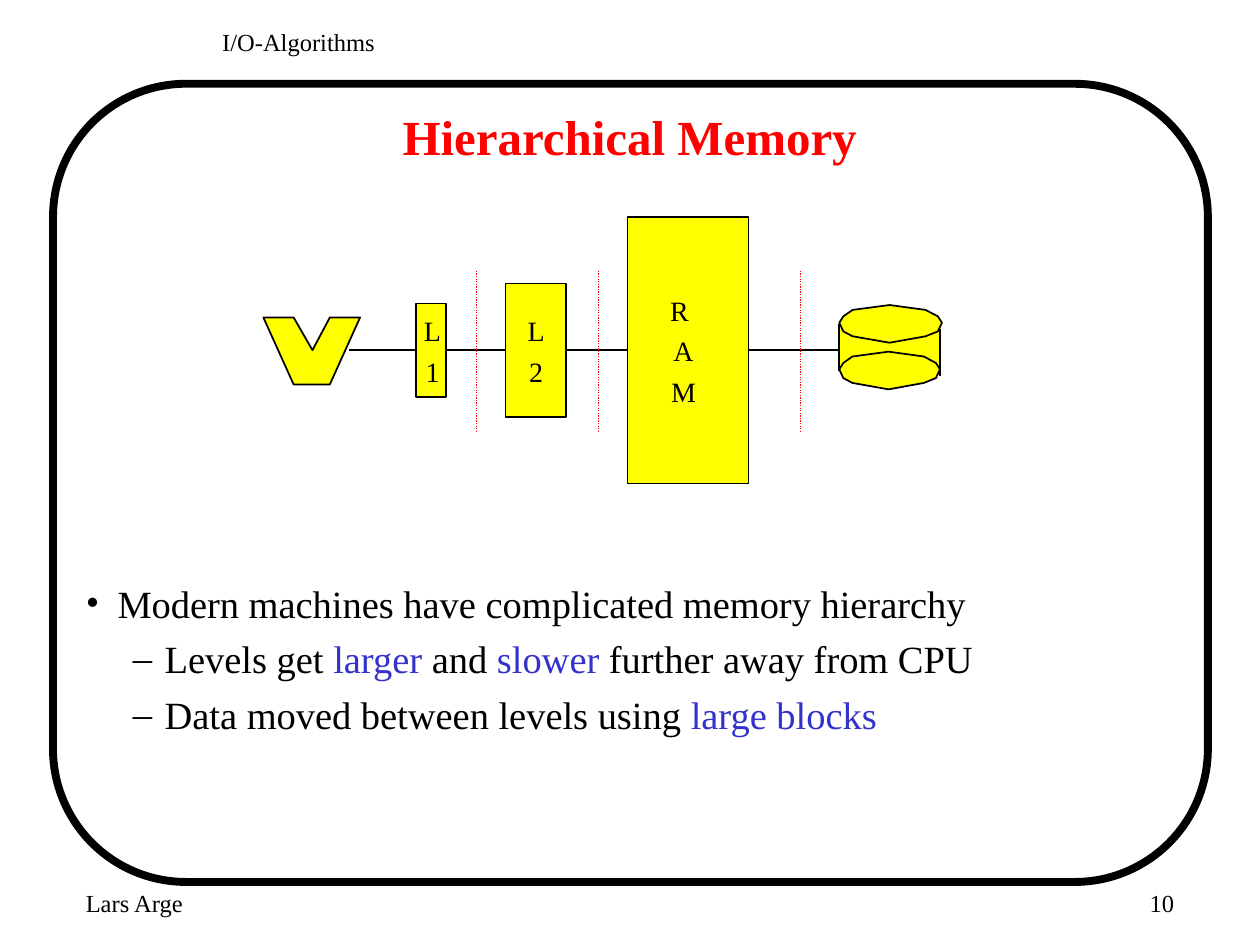
import pptx
import pptx.util
import pptx.dml.color
import pptx.enum.dml
import pptx.enum.shapes
import pptx.enum.text
import pptx.oxml

Cm = pptx.util.Cm
Pt = pptx.util.Pt
RGB = pptx.dml.color.RGBColor
ALIGN = pptx.enum.text.PP_ALIGN
SHAPE = pptx.enum.shapes.MSO_SHAPE
BLACK = RGB(0, 0, 0)
RED = RGB(255, 0, 0)
BLUE = RGB(0x33, 0x33, 0xCC)
YELLOW = RGB(255, 255, 0)
FONT = "Times New Roman"
AXIS = 7.06


def add_tag(node, name, **attrs):
    child = pptx.oxml.parse_xml(
        f'<a:{name} xmlns:a="http://schemas.openxmlformats.org/drawingml/2006/main"/>')
    for key, value in attrs.items():
        child.set(key, value)
    node.append(child)


def paint(shape, fill=YELLOW, width=1):
    """Set fill and black outline; None leaves either one out."""
    shape.shadow.inherit = False
    if fill is None:
        shape.fill.background()
    else:
        shape.fill.solid()
        shape.fill.fore_color.rgb = fill
    if width is None:
        shape.line.fill.background()
    else:
        shape.line.color.rgb = BLACK
        shape.line.width = Pt(width)


def add_block(slide, x, y, w, h, kind=SHAPE.RECTANGLE, **style):
    paint(slide.shapes.add_shape(kind, Cm(x), Cm(y), Cm(w), Cm(h)), **style)


def add_line(slide, x1, y1, x2, y2, color=BLACK, width=1, dash=None):
    line = slide.shapes.add_connector(
        pptx.enum.shapes.MSO_CONNECTOR.STRAIGHT, Cm(x1), Cm(y1), Cm(x2), Cm(y2))
    line.line.color.rgb = color
    line.line.width = Pt(width)
    if dash:
        line.line.dash_style = dash
    add_tag(line._element.spPr, "effectLst")


def add_poly(slide, points):
    first, *rest = [(Cm(x), Cm(y)) for x, y in points]
    form = slide.shapes.build_freeform(*first)
    form.add_line_segments(rest, close=True)
    paint(form.convert_to_shape())


def add_plate(slide, x, y, w, h):
    """Draw one twelve-sided face of the disk."""
    upper = [(0, .47), (.04, .3), (.13, .13), (.49, 0), (.84, .13), (.96, .3), (1, .47)]
    lower = [(.96, .7), (.84, .83), (.49, 1), (.13, .83), (.04, .7)]
    add_poly(slide, [(x + w * u, y + h * v) for u, v in upper + lower])


def add_box(slide, x, y, w, h, wrap=True):
    frame = slide.shapes.add_textbox(Cm(x), Cm(y), Cm(w), Cm(h)).text_frame
    frame.word_wrap = wrap
    return frame


def add_run(para, text, size, color=BLACK, bold=False):
    run = para.add_run()
    run.text = text
    run.font.name = FONT
    run.font.size = Pt(size)
    run.font.color.rgb = color
    run.font.bold = bold


def next_para(frame, index, gap):
    """Return the paragraph at index, with a gap above all but the first."""
    if index == 0:
        return frame.paragraphs[0]
    para = frame.add_paragraph()
    para.space_before = Pt(gap)
    return para


def indent(para, left):
    props = para._p.get_or_add_pPr()
    props.set("marL", str(Cm(left)))
    props.set("indent", str(-Cm(0.64)))
    return props


def add_text(slide, x, y, w, h, text, size=14, color=BLACK, bold=False, align=ALIGN.LEFT):
    frame = add_box(slide, x, y, w, h)
    para = frame.paragraphs[0]
    para.alignment = align
    add_run(para, text, size, color, bold)
    return frame


def add_label(slide, x, y, h, marks):
    frame = add_box(slide, x, y, 1.04, h, wrap=False)
    for index, mark in enumerate(marks):
        para = next_para(frame, index, 3.9)
        para.alignment = ALIGN.CENTER
        indent(para, 0.64)
        add_run(para, mark, 16)


def add_list(slide, x, y, w, h, items):
    frame = add_box(slide, x, y, w, h)
    for index, (level, runs) in enumerate(items):
        para = next_para(frame, index, 5.5)
        para.level = level
        props = indent(para, (0.64, 1.59)[level])
        add_tag(props, "buFont", typeface=FONT)
        add_tag(props, "buChar", char="•–"[level])
        for text, color in runs:
            add_run(para, text, 22, color)


def draw_chain(slide):
    """Draw processor, caches, main memory and disk along one axis."""
    add_block(slide, 16.92, 6.63, 2.03, 0.86, width=None)
    for x, w, h in [(8.38, 0.61, 1.88), (10.19, 1.22, 2.69), (12.65, 2.44, 5.38)]:
        add_block(slide, x, AXIS - h / 2, w, h)
    add_plate(slide, 16.92, 6.15, 2.07, 0.76)
    for x, y in [(16.92, 6.53), (18.95, 6.63)]:
        add_line(slide, x, y, x, y + 0.94)
    add_poly(slide, [(5.31, 6.4), (5.92, 6.4), (6.3, AXIS), (6.65, 6.4),
                     (7.26, 6.4), (6.65, 7.75), (5.92, 7.75)])
    for left, right in [(7.04, 8.38), (8.99, 10.19), (11.41, 12.65), (15.09, 16.92)]:
        add_line(slide, left, AXIS, right, AXIS)
    add_plate(slide, 16.92, 7.09, 2.03, 0.76)
    add_label(slide, 8.2, 6.2, 1.75, "L1")
    add_label(slide, 10.29, 6.2, 1.75, "L2")
    add_label(slide, 13.26, 5.79, 2.57, ["R\t", "A", "M"])
    for x in (9.6, 12.07, 16.13):
        add_line(slide, x, 5.46, x, 8.72, RED, 0.75,
                 pptx.enum.dml.MSO_LINE.ROUND_DOT)


def main():
    deck = pptx.Presentation()
    deck.slide_width, deck.slide_height = Cm(25.4), Cm(19.05)
    slide = deck.slides.add_slide(deck.slide_layouts[6])
    add_block(slide, 1.07, 1.69, 23.28, 16.09,
              SHAPE.FLOWCHART_ALTERNATE_PROCESS, fill=None, width=4.5)
    add_text(slide, 1.48, 17.78, 5.29, 1.27, "Lars Arge")
    add_text(slide, 4.23, 0.42, 16.72, 1.06, "I/O-Algorithms")
    add_text(slide, 18.63, 17.78, 5.29, 1.27, "10", align=ALIGN.RIGHT)
    title = add_text(slide, 1.9, 1.9, 21.59, 1.69, "Hierarchical Memory",
                     28, RED, True, ALIGN.CENTER)
    title.vertical_anchor = pptx.enum.text.MSO_ANCHOR.MIDDLE
    add_list(slide, 1.48, 11.56, 22.44, 5.87, [
        (0, [("Modern machines have complicated memory hierarchy", BLACK)]),
        (1, [("Levels get ", BLACK), ("larger ", BLUE), ("and", BLACK),
             (" slower", BLUE), (" further away from CPU", BLACK)]),
        (1, [("Data moved between levels using ", BLACK), ("large blocks", BLUE)]),
    ])
    draw_chain(slide)
    deck.save("out.pptx")


if __name__ == "__main__":
    main()
